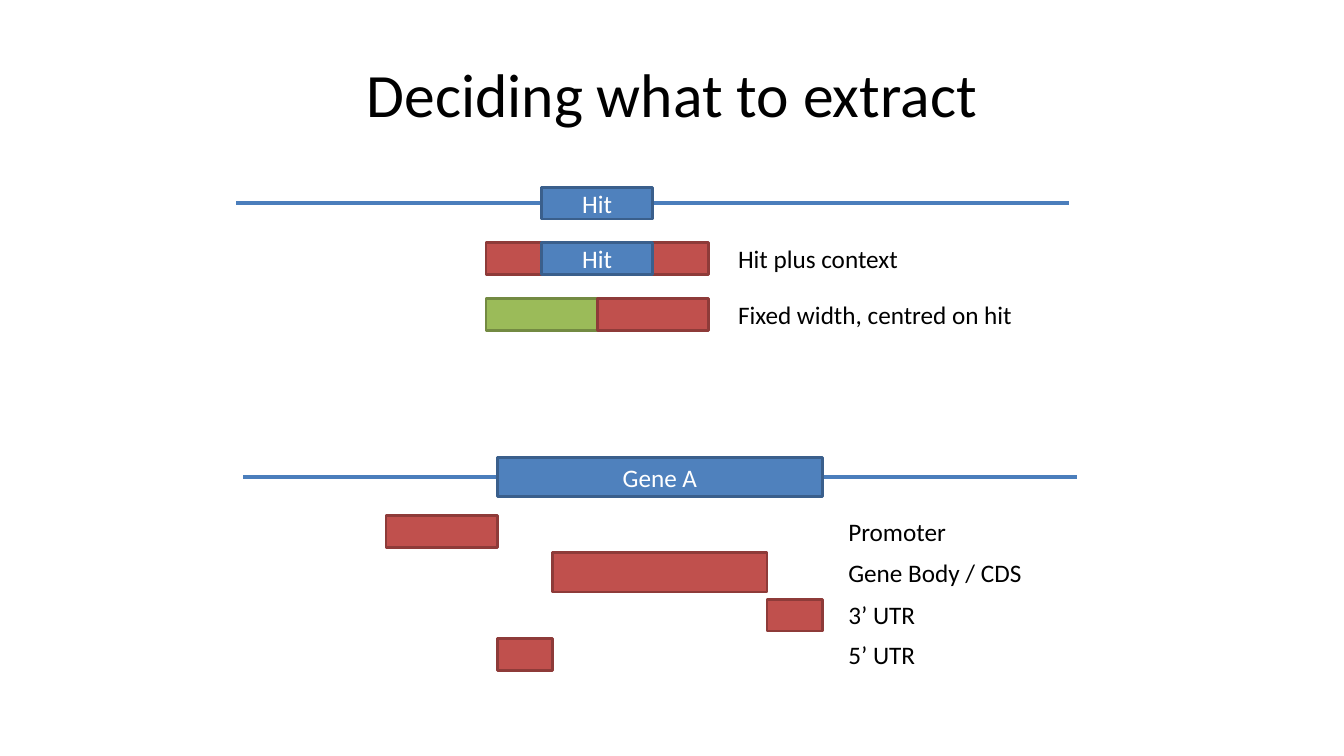
from pptx import Presentation
from pptx.dml.color import RGBColor
from pptx.enum.shapes import MSO_CONNECTOR as Link, MSO_SHAPE as Shape
from pptx.enum.text import MSO_ANCHOR as Anchor, MSO_AUTO_SIZE as Fit, PP_ALIGN as Align
from pptx.oxml.ns import qn
from pptx.util import Cm, Pt
from lxml import etree

# Fill and outline pairs
BLUE = ("4F81BD", "3A5F8C")
RED = ("C0504D", "8E3B39")
GREEN = ("9BBB59", "738A42")

BAR = 0.8   # height of a thin bar
TALL = 1.0  # height of a gene bar
UNIT = 1.4  # half the width of a hit


def color(code):
    return RGBColor.from_string(code)


def write(frame, words, size, code, align):
    para = frame.paragraphs[0]
    para.text = words
    para.alignment = align
    para.font.name = "Calibri"
    para.font.size = Pt(size)
    para.font.color.rgb = color(code)


def bar(slide, left, mid, width, height, paint, words=""):
    """Draw a bar whose vertical centre is mid."""
    rect = slide.shapes.add_shape(Shape.RECTANGLE, Cm(left), Cm(mid - height / 2),
                                  Cm(width), Cm(height))
    rect.shadow.inherit = False
    rect.fill.solid()
    rect.fill.fore_color.rgb = color(paint[0])
    rect.line.color.rgb = color(paint[1])
    rect.line.width = Pt(2)
    if words:
        rect.text_frame.vertical_anchor = Anchor.MIDDLE
        write(rect.text_frame, words, 18, "FFFFFF", Align.CENTER)


def label(slide, left, mid, width, words):
    height = 1.02
    box = slide.shapes.add_textbox(Cm(left), Cm(mid - height / 2), Cm(width), Cm(height))
    box.text_frame.word_wrap = False
    box.text_frame.auto_size = Fit.SHAPE_TO_FIT_TEXT
    write(box.text_frame, words, 18, "000000", Align.LEFT)


def strand(slide, left, mid, width):
    line = slide.shapes.add_connector(Link.STRAIGHT, Cm(left), Cm(mid),
                                      Cm(left + width), Cm(mid))
    line.line.color.rgb = color("4B7EBC")
    line.line.width = Pt(3)
    etree.SubElement(line._element.spPr, qn("a:effectLst"))


def title(slide, left, top, width, height):
    box = slide.shapes.add_textbox(Cm(left), Cm(top), Cm(width), Cm(height))
    box.text_frame.word_wrap = True
    box.text_frame.vertical_anchor = Anchor.MIDDLE
    write(box.text_frame, "Deciding what to extract", 44, "000000", Align.CENTER)


def hits(slide, left, mid, width):
    """Ways to extract around a hit, stacked below its strand."""
    hit = left + 7.7
    start = hit - UNIT
    note = left + 12.4
    near, fixed = mid + UNIT, mid + 2 * UNIT

    # Hit on the strand
    strand(slide, left, mid, width)
    bar(slide, hit, mid, 2 * UNIT, BAR, BLUE, "Hit")

    # Hit plus context
    bar(slide, start, near, 4 * UNIT, BAR, RED)
    bar(slide, hit, near, 2 * UNIT, BAR, BLUE, "Hit")
    label(slide, note, near, 4.6, "Hit plus context")

    # Fixed width
    for i, paint in enumerate((GREEN, RED)):
        bar(slide, start + i * 2 * UNIT, fixed, 2 * UNIT, BAR, paint)
    label(slide, note, fixed, 7.5, "Fixed width, centred on hit")


def gene(slide, left, mid, width):
    """Parts of a gene, stacked below its strand."""
    start, span = left + 6.4, 8.2
    end = start + span

    # Gene on the strand
    strand(slide, left, mid, width)
    bar(slide, start, mid, span, TALL, BLUE, "Gene A")

    # Parts: left, drop below strand, width, height, name, name width
    parts = [
        (start - 2 * UNIT, 1.38, 2 * UNIT, BAR, "Promoter", 3.0),
        (start + UNIT, 2.4, span - 2 * UNIT, TALL, "Gene Body / CDS", 4.93),
        (end - UNIT, 3.48, UNIT, BAR, "3’ UTR", 2.2),
        (start, 4.48, UNIT, BAR, "5’ UTR", 2.2),
    ]
    for x, drop, wide, high, name, room in parts:
        bar(slide, x, mid + drop, wide, high, RED)
        label(slide, end + 0.4, mid + drop, room, name)


def main():
    deck = Presentation()
    deck.slide_width, deck.slide_height = Cm(33.87), Cm(19.05)
    slide = deck.slides.add_slide(deck.slide_layouts[6])
    title(slide, 1.7, 0.76, 30.48, 3.18)
    hits(slide, 5.95, 5.12, 21)
    gene(slide, 6.13, 12.02, 21)
    deck.save("out.pptx")


if __name__ == "__main__":
    main()
